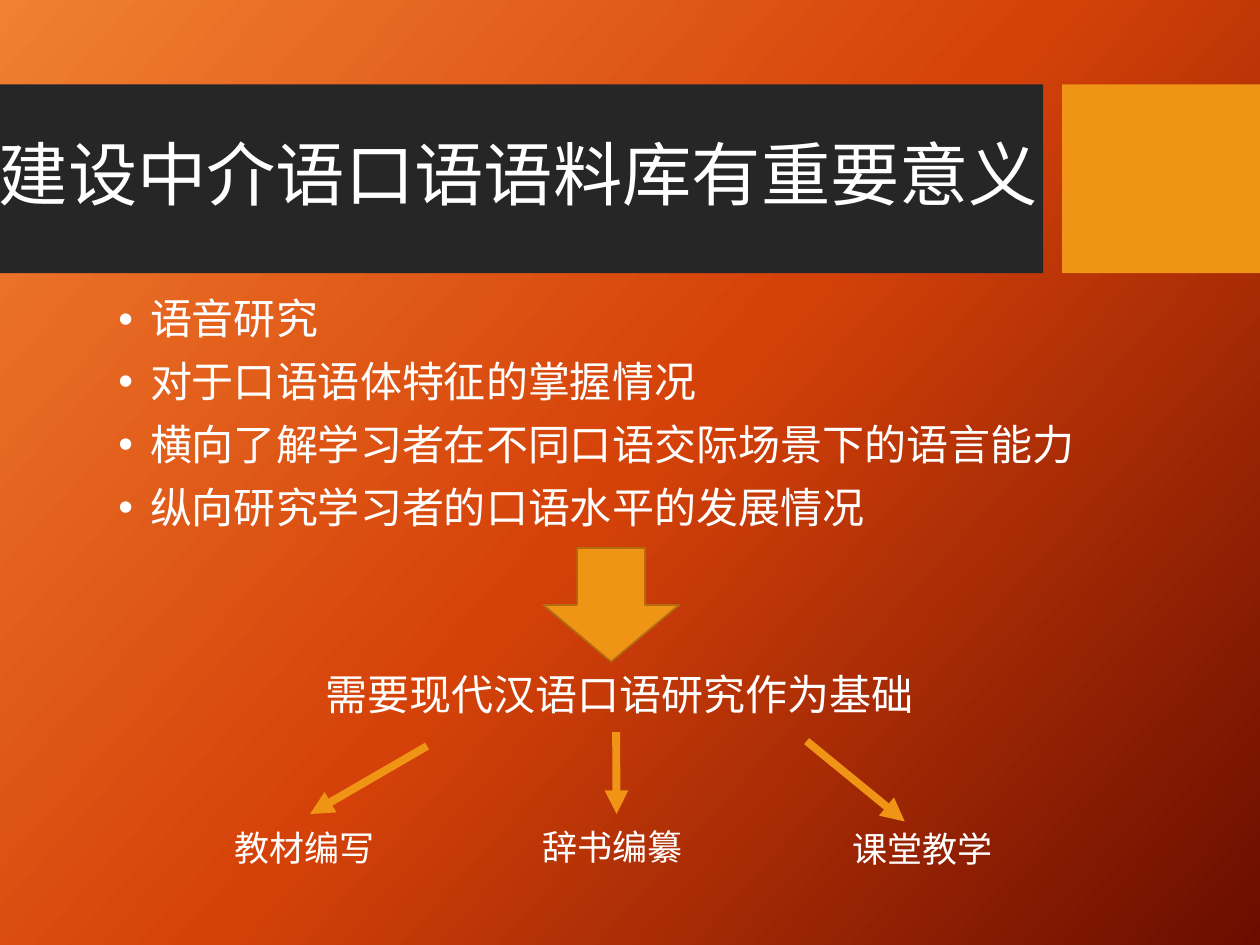
"""Build a slide on why a spoken interlanguage corpus matters."""
from copy import deepcopy

from lxml.etree import SubElement
from pptx import Presentation
from pptx.dml.color import RGBColor
from pptx.enum.shapes import MSO_CONNECTOR as Connector, MSO_SHAPE as Preset
from pptx.enum.text import MSO_ANCHOR as Anchor, MSO_AUTO_SIZE as AutoSize, PP_ALIGN as Align
from pptx.oxml.ns import qn
from pptx.util import Cm, Pt

ORANGE = "F09415"


def color(value):
    return RGBColor.from_string(value)


def write(paragraph, text, size):
    paragraph.text = text
    paragraph.alignment = Align.LEFT
    paragraph.font.name = "Lato"
    paragraph.font.size = Pt(size)
    paragraph.font.color.rgb = color("FFFFFF")


presentation = Presentation()
presentation.slide_width, presentation.slide_height = Cm(25.4), Cm(19.05)
slide = presentation.slides.add_slide(presentation.slide_layouts[1])

background = slide.background.fill
background.gradient()
background.gradient_angle = 318
stop_list = slide.element.find(".//" + qn("a:gsLst"))
stop_list.append(deepcopy(stop_list[-1]))
for stop, position, value in zip(background.gradient_stops, (0, 0.5, 1), ("F18031", "D54209", "6A0D00")):
    stop.position = position
    stop.color.rgb = color(value)

for left, width, value in ((0, 21.03, "262626"), (21.41, 3.99, ORANGE)):
    bar = slide.shapes.add_shape(Preset.RECTANGLE, Cm(left), Cm(1.7), Cm(width), Cm(3.81))
    bar.shadow.inherit = False
    bar.fill.solid()
    bar.fill.fore_color.rgb = color(value)
    bar.line.fill.background()

title, body = slide.placeholders
for placeholder, left, top, width, height in ((title, -0.43, 2.08, 22.15, 3), (body, 2.13, 5.89, 21.29, 5.11)):
    placeholder.left, placeholder.top = Cm(left), Cm(top)
    placeholder.width, placeholder.height = Cm(width), Cm(height)
    placeholder.text_frame.auto_size = AutoSize.NONE
    slide.shapes.element.append(placeholder.element)

title.text_frame.vertical_anchor = Anchor.MIDDLE
heading = title.text_frame.paragraphs[0]
heading.line_spacing = 0.9
heading._p.get_or_add_pPr().set("marL", str(Cm(0.15)))
write(heading, "建设中介语口语语料库有重要意义", 39.6)

reasons = (
    "语音研究",
    "对于口语语体特征的掌握情况",
    "横向了解学习者在不同口语交际场景下的语言能力",
    "纵向研究学习者的口语水平的发展情况",
)
for index, reason in enumerate(reasons):
    paragraph = body.text_frame.add_paragraph() if index else body.text_frame.paragraphs[0]
    properties = paragraph._p.get_or_add_pPr()
    properties.set("marL", str(Cm(0.64)))
    properties.set("indent", str(Cm(-0.64)))
    paragraph.line_spacing = 0.9
    paragraph.space_before = Pt(10 if index else 0)
    write(paragraph, reason, 24)

down_arrow = slide.shapes.add_shape(Preset.DOWN_ARROW, Cm(10.95), Cm(11.05), Cm(2.74), Cm(2.29))
down_arrow.shadow.inherit = False
down_arrow.fill.solid()
down_arrow.fill.fore_color.rgb = color(ORANGE)
down_arrow.line.color.rgb = color("B26D10")
down_arrow.line.width = Pt(1)

labels = (
    ("需要现代汉语口语研究作为基础", 6.32, 13.36, 12.9, 1.27, 24),
    ("教材编写", 4.47, 16.54, 3.45, 1.12, 20),
    ("辞书编纂", 10.69, 16.51, 3.45, 1.12, 20),
    ("课堂教学", 16.94, 16.56, 3.45, 1.12, 20),
)
for text, left, top, width, height, size in labels:
    label = slide.shapes.add_textbox(Cm(left), Cm(top), Cm(width), Cm(height))
    label.text_frame.word_wrap = True
    label.text_frame.auto_size = AutoSize.SHAPE_TO_FIT_TEXT
    write(label.text_frame.paragraphs[0], text, size)

for start_x, start_y, end_x, end_y in (
    (8.61, 15.04, 6.25, 16.41),
    (12.42, 14.76, 12.43, 16.41),
    (16.26, 14.94, 18.24, 16.56),
):
    arrow = slide.shapes.add_connector(Connector.STRAIGHT, Cm(start_x), Cm(start_y), Cm(end_x), Cm(end_y))
    arrow.line.color.rgb = color(ORANGE)
    arrow.line.width = Pt(4.5)
    SubElement(arrow.line._get_or_add_ln(), qn("a:tailEnd"), type="triangle")
    SubElement(arrow._element.spPr, qn("a:effectLst"))

presentation.save("out.pptx")
